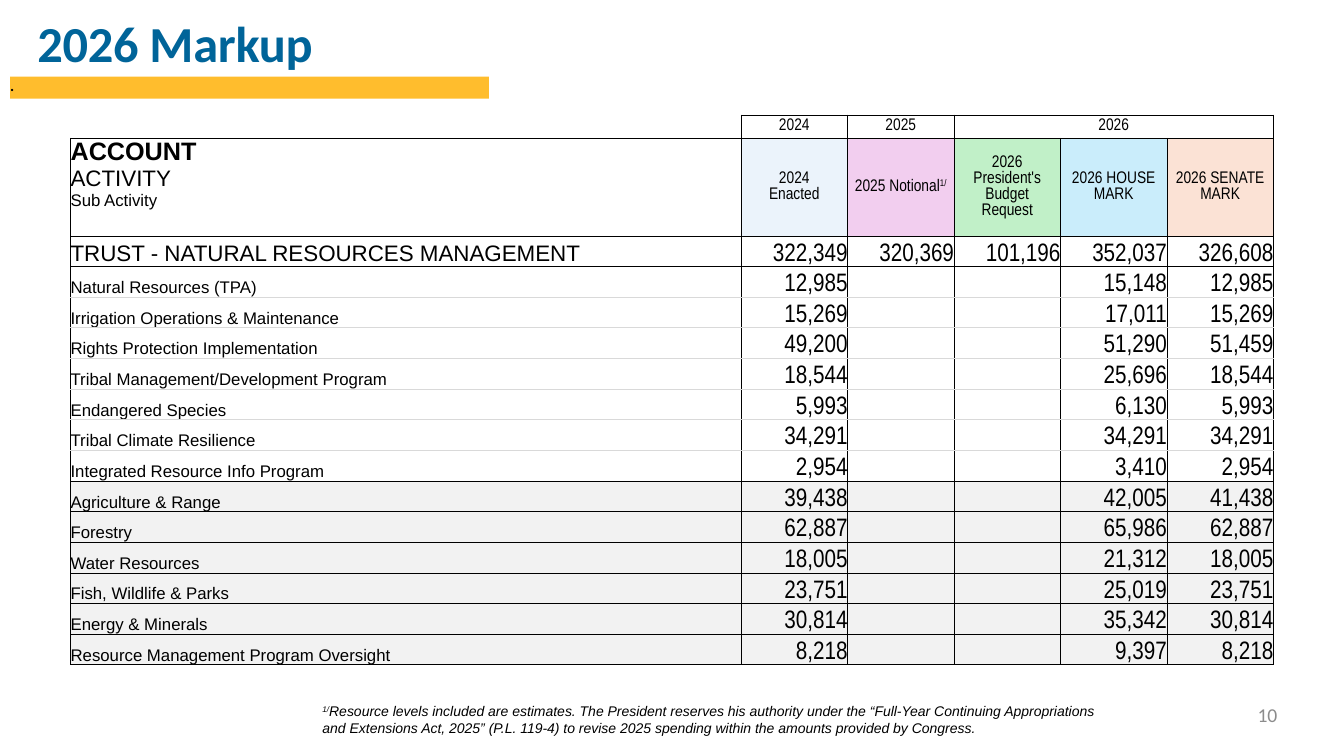
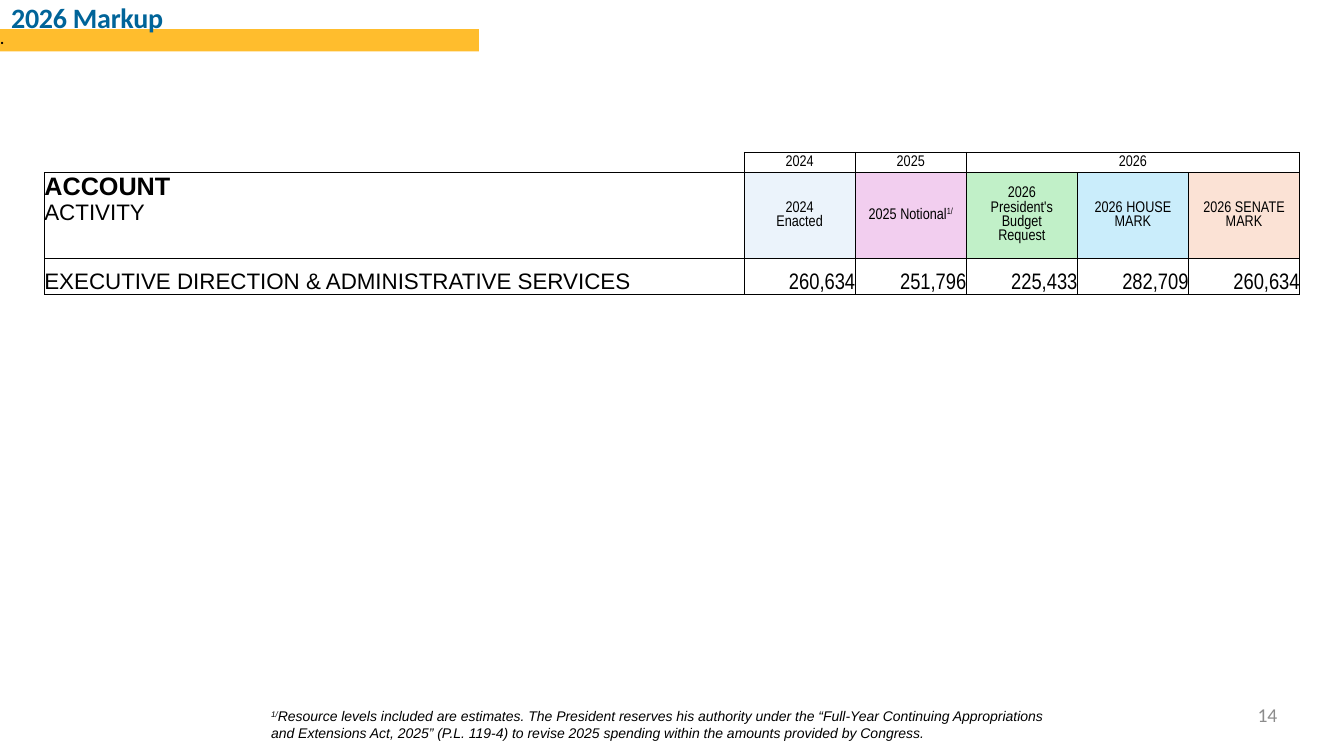
from copy import deepcopy
from dataclasses import dataclass
from enum import Enum
from typing import NamedTuple

from lxml import etree
from pptx import Presentation
from pptx import util as u
from pptx.dml.color import RGBColor
from pptx.enum import shapes, text
from pptx.oxml import ns

PX = 9144
COLORS = {
    "ink": "000000",
    "title": "006499",
    "band": "FFBD2D",
    "page": "8C8C8C",
    "rule": "D9D9D9",
    "shade": "F2F2F2",
    "enacted": "EBF3FB",
    "notional": "F2CEEF",
    "request": "C1F0C8",
    "house": "CAEDFB",
    "senate": "FBE2D5",
}
SANS, NARROW, HEADING = "Arial", "Arial Narrow", "Calibri"
LEFT, CENTER, RIGHT = text.PP_ALIGN.LEFT, text.PP_ALIGN.CENTER, text.PP_ALIGN.RIGHT
TOP, MIDDLE, BOTTOM = text.MSO_ANCHOR.TOP, text.MSO_ANCHOR.MIDDLE, text.MSO_ANCHOR.BOTTOM
SIDES = ("L", "R", "T", "B")
YEARS = ("2024", "2025", "2026")
NOTE = (
    "Resource levels included are estimates. The President reserves his authority under the "
    "“Full-Year Continuing Appropriations and Extensions Act, 2025” (P.L. 119-4) to revise 2025 "
    "spending within the amounts provided by Congress."
)


class Level(Enum):
    ACTIVITY = 16
    SUB = 12
    SHADED = 12.0001


class Box(NamedTuple):
    left: int
    top: int
    width: int
    height: int

    def emu(self) -> list[u.Emu]:
        return [u.Emu(length * PX) for length in self]


class Span(NamedTuple):
    words: str
    size: int
    font: str = SANS
    color: str = "ink"
    bold: bool = False
    italic: bool = False
    raised: bool = False
    spacing: int = 0


class Column(NamedTuple):
    heading: str
    color: str
    mark: str = ""


class Line(NamedTuple):
    label: str
    amounts: tuple[str, ...]
    level: Level


@dataclass
class Markup:
    page: str
    title: Box
    title_size: int
    band: Box
    note: Box
    table: Box
    label_width: int
    head_heights: tuple[int, int]
    head_size: int
    amount_size: int
    key: tuple[Span, ...]
    lines: list[Line]


COLUMNS = (
    Column("2024\nEnacted", "enacted"),
    Column("2025 Notional", "notional", "1/"),
    Column("2026\nPresident's\nBudget\nRequest", "request"),
    Column("2026 HOUSE MARK", "house"),
    Column("2026 SENATE MARK", "senate"),
)


def partial(label: str, enacted: str, house: str, senate: str, level: Level = Level.SUB) -> Line:
    return Line(label, (enacted, "", "", house, senate), level)


RESOURCES = [
    Line("TRUST - NATURAL RESOURCES MANAGEMENT",
         ("322,349", "320,369", "101,196", "352,037", "326,608"), Level.ACTIVITY),
    partial("Natural Resources (TPA)", "12,985", "15,148", "12,985"),
    partial("Irrigation Operations & Maintenance", "15,269", "17,011", "15,269"),
    partial("Rights Protection Implementation", "49,200", "51,290", "51,459"),
    partial("Tribal Management/Development Program", "18,544", "25,696", "18,544"),
    partial("Endangered Species", "5,993", "6,130", "5,993"),
    partial("Tribal Climate Resilience", "34,291", "34,291", "34,291"),
    partial("Integrated Resource Info Program", "2,954", "3,410", "2,954"),
    partial("Agriculture & Range", "39,438", "42,005", "41,438", Level.SHADED),
    partial("Forestry", "62,887", "65,986", "62,887", Level.SHADED),
    partial("Water Resources", "18,005", "21,312", "18,005", Level.SHADED),
    partial("Fish, Wildlife & Parks", "23,751", "25,019", "23,751", Level.SHADED),
    partial("Energy & Minerals", "30,814", "35,342", "30,814", Level.SHADED),
    partial("Resource Management Program Oversight", "8,218", "9,397", "8,218", Level.SHADED),
]
ADMINISTRATION = [
    Line("EXECUTIVE DIRECTION & ADMINISTRATIVE SERVICES",
         ("260,634", "251,796", "225,433", "282,709", "260,634"), Level.ACTIVITY),
]
ACCOUNT = Span("ACCOUNT\n", 18, bold=True)
MARKUPS = (
    Markup("10", Box(36, 10, 899, 62), 36, Box(10, 76, 475, 22), Box(310, 692, 791, 44),
           Box(70, 114, 1193, 546), 665, (23, 97), 12, 18,
           (ACCOUNT, Span("ACTIVITY\n", 16), Span("Sub Activity", 12)), RESOURCES),
    Markup("14", Box(10, -2, 899, 35), 20, Box(0, 29, 475, 22), Box(259, 697, 791, 44),
           Box(44, 151, 1245, 141), 694, (20, 85), 11, 16,
           (ACCOUNT, Span("ACTIVITY", 16)), ADMINISTRATION),
)


def rgb(name: str) -> RGBColor:
    return RGBColor.from_string(COLORS[name])


def write(frame, spans: tuple[Span, ...], align=LEFT) -> None:
    paragraph = frame.paragraphs[0]
    paragraph.alignment = align
    for span in spans:
        for index, words in enumerate(span.words.split("\n")):
            if index:
                paragraph.add_line_break()
                paragraph._p[-1].append(deepcopy(run._r.rPr))
            if not words:
                continue
            run = paragraph.add_run()
            run.text = words
            font = run.font
            font.name, font.size = span.font, u.Pt(span.size)
            font.bold, font.italic = span.bold, span.italic
            font.color.rgb = rgb(span.color)
            if span.raised:
                run._r.rPr.set("baseline", "30000")
            if span.spacing:
                run._r.rPr.set("spc", str(span.spacing))


def set_insets(frame, left: int = 0, top: int = 0) -> None:
    frame.margin_left, frame.margin_top = u.Emu(left * PX), u.Emu(top * PX)
    frame.margin_right = frame.margin_bottom = 0


def add_title(slide, markup: Markup) -> None:
    title = slide.shapes.title
    title.left, title.top, title.width, title.height = markup.title.emu()
    frame = title.text_frame
    frame.auto_size = text.MSO_AUTO_SIZE.NONE
    frame.word_wrap = True
    frame.vertical_anchor = TOP
    set_insets(frame, 1, 2)
    write(frame, (Span("2026 Markup", markup.title_size, HEADING, "title", bold=True, spacing=-20),))


def add_band(slide, box: Box) -> None:
    band = slide.shapes.add_shape(shapes.MSO_SHAPE.RECTANGLE, *box.emu())
    band.shadow.inherit = False
    band.fill.solid()
    band.fill.fore_color.rgb = rgb("band")
    band.line.fill.background()
    set_insets(band.text_frame)
    band.text_frame.vertical_anchor = TOP
    write(band.text_frame, (Span(".", 11, HEADING, bold=True),))
    slide.shapes._spTree.insert(2, band._element)


def add_note(slide, box: Box) -> None:
    frame = slide.shapes.add_textbox(*box.emu()).text_frame
    frame.word_wrap = True
    write(frame, (Span("1/", 10, italic=True, raised=True), Span(NOTE, 10, italic=True)))


def add_page(slide, page: str) -> None:
    frame = slide.shapes.add_textbox(*Box(960, 697, 307, 24).emu()).text_frame
    frame.word_wrap = True
    set_insets(frame)
    write(frame, (Span(page, 14, HEADING, "page"),), RIGHT)


def set_border(cell, side: str, color: str | None) -> None:
    border = etree.SubElement(cell._tc.get_or_add_tcPr(), ns.qn(f"a:ln{side}"), w=str(u.Pt(0.5)))
    if color is None:
        etree.SubElement(border, ns.qn("a:noFill"))
        return
    fill = etree.SubElement(border, ns.qn("a:solidFill"))
    etree.SubElement(fill, ns.qn("a:srgbClr"), val=COLORS[color])


def fill_cell(cell, spans: tuple[Span, ...] = (), align=LEFT, anchor=BOTTOM,
              color: str | None = None, borders: dict[str, str | None] | None = None) -> None:
    set_insets(cell)
    cell.vertical_anchor = anchor
    for side in SIDES:
        set_border(cell, side, (borders or {}).get(side, "ink"))
    if color:
        cell.fill.solid()
        cell.fill.fore_color.rgb = rgb(color)
    else:
        cell.fill.background()
    if any(span.words for span in spans):
        write(cell.text_frame, spans, align)
    else:
        etree.SubElement(cell.text_frame.paragraphs[0]._p, ns.qn("a:endParaRPr"), sz="1000")


def add_heads(table, markup: Markup) -> None:
    fill_cell(table.cell(0, 0), borders={"L": None, "T": None})
    for index in range(len(COLUMNS)):
        year = YEARS[index] if index < len(YEARS) else ""
        fill_cell(table.cell(0, index + 1), (Span(year, markup.head_size, NARROW),), CENTER, MIDDLE)
    table.cell(0, len(YEARS)).merge(table.cell(0, len(COLUMNS)))
    fill_cell(table.cell(1, 0), markup.key, anchor=TOP)
    for index, column in enumerate(COLUMNS, 1):
        spans = (Span(column.heading, markup.head_size, NARROW),
                 Span(column.mark, markup.head_size, NARROW, raised=True))
        fill_cell(table.cell(1, index), spans, CENTER, MIDDLE, column.color)


def add_lines(table, markup: Markup) -> None:
    levels = [line.level for line in markup.lines]
    for index, line in enumerate(markup.lines):
        borders = {}
        if line.level is Level.SUB:
            if levels[index - 1] is Level.SUB:
                borders["T"] = "rule"
            if levels[index + 1] is Level.SUB:
                borders["B"] = "rule"
        color = "shade" if line.level is Level.SHADED else None
        row = index + 2
        fill_cell(table.cell(row, 0), (Span(line.label, int(line.level.value)),),
                  color=color, borders=borders)
        for column, amount in enumerate(line.amounts, 1):
            fill_cell(table.cell(row, column), (Span(amount, markup.amount_size, NARROW),),
                      RIGHT, color=color, borders=borders)


def add_budget(slide, markup: Markup) -> None:
    box, count = markup.table, len(markup.lines)
    table = slide.shapes.add_table(count + 2, len(COLUMNS) + 1, *box.emu()).table
    table.first_row = table.horz_banding = False
    amount_width = (box.width - markup.label_width) * PX // len(COLUMNS)
    for index, column in enumerate(table.columns):
        column.width = u.Emu(amount_width if index else markup.label_width * PX)
    line_height = (box.height - sum(markup.head_heights)) * PX // count
    heights = [height * PX for height in markup.head_heights] + [line_height] * count
    for row, height in zip(table.rows, heights):
        row.height = u.Emu(height)
    add_heads(table, markup)
    add_lines(table, markup)


def main() -> None:
    deck = Presentation()
    deck.slide_width, deck.slide_height = u.Emu(1333 * PX), u.Emu(750 * PX)
    for markup in MARKUPS:
        slide = deck.slides.add_slide(deck.slide_layouts[5])
        add_title(slide, markup)
        add_band(slide, markup.band)
        add_page(slide, markup.page)
        add_note(slide, markup.note)
        add_budget(slide, markup)
    deck.save("out.pptx")


if __name__ == "__main__":
    main()
